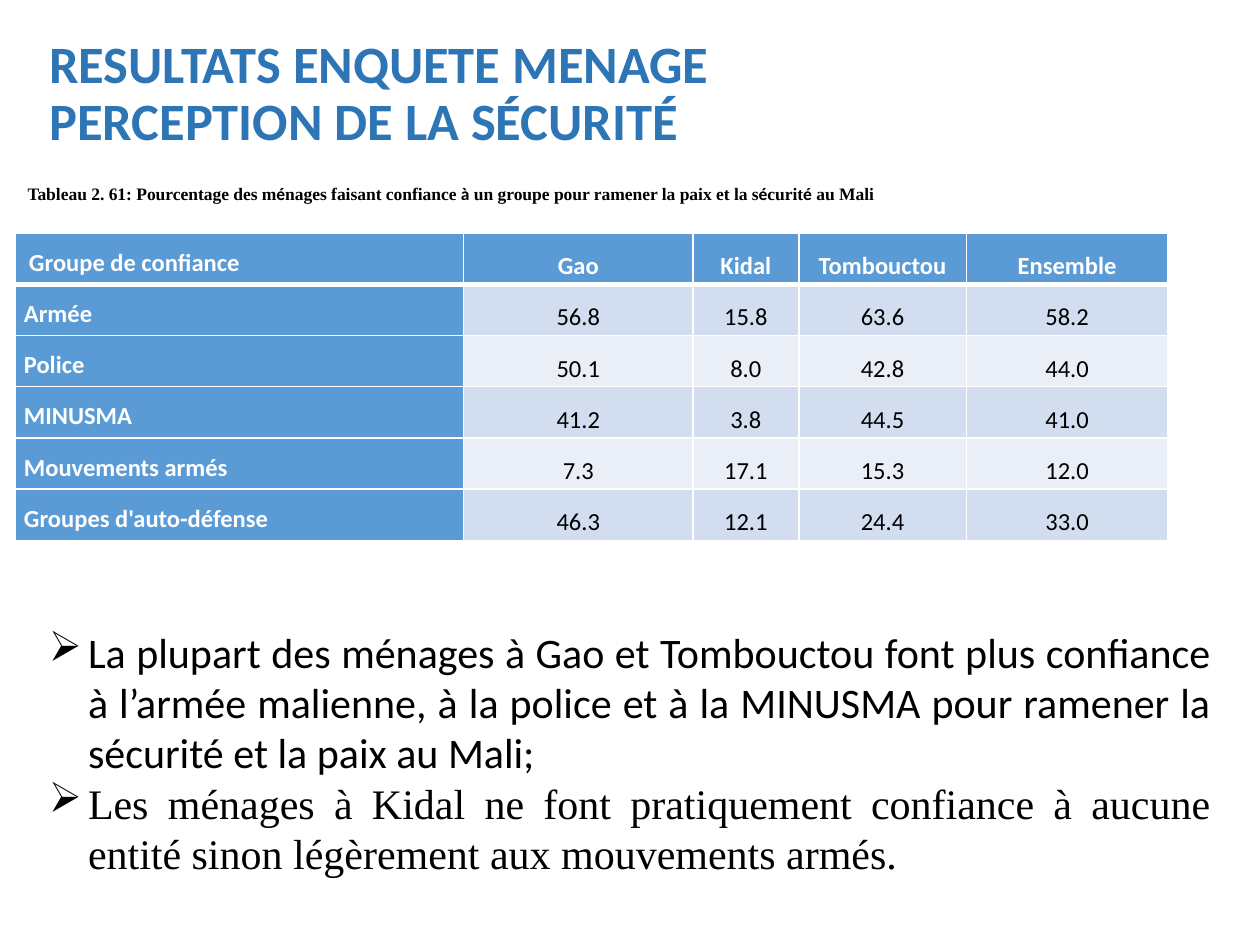
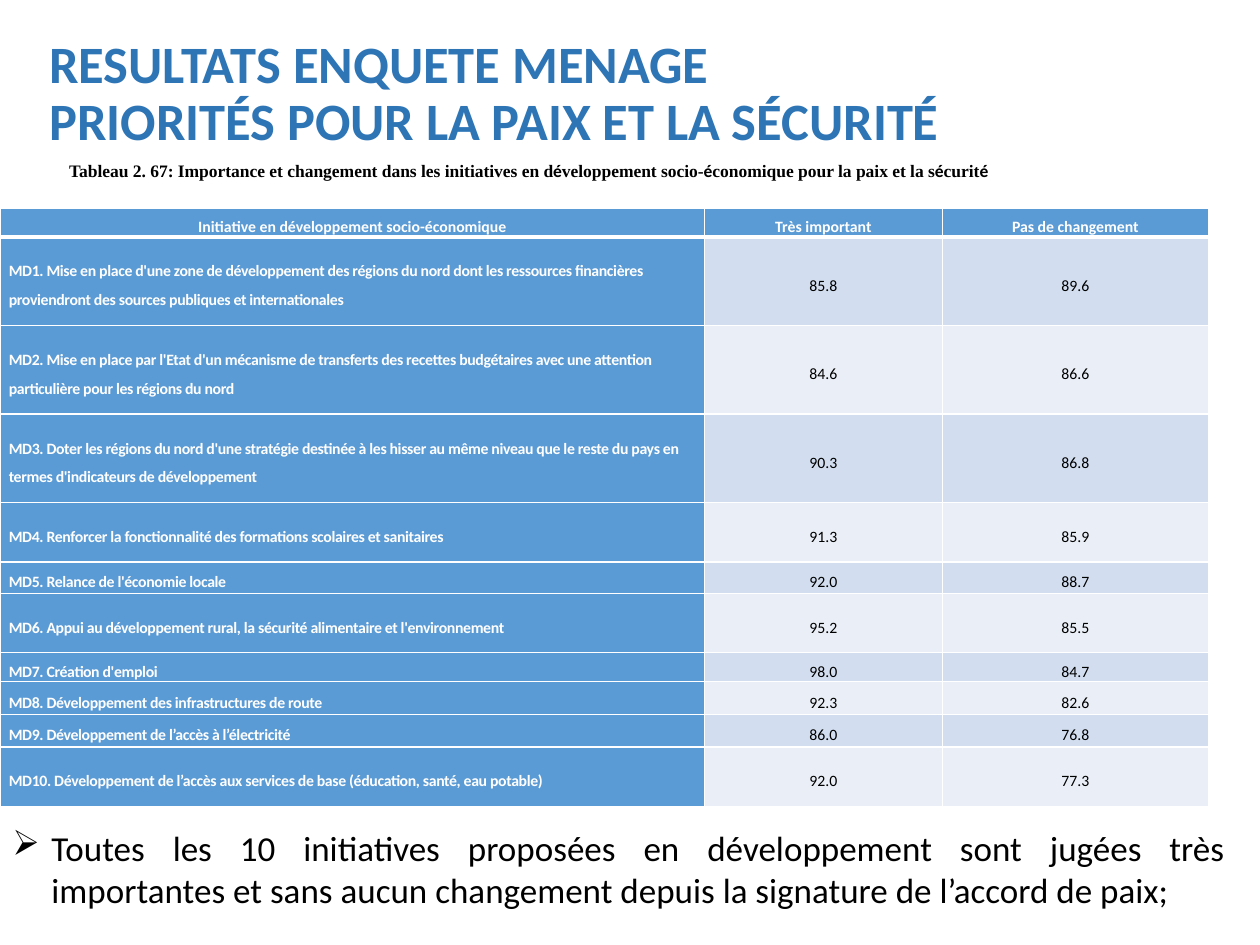
from copy import deepcopy
from itertools import groupby

from lxml import etree
from pptx import Presentation
from pptx.dml.color import RGBColor
from pptx.enum.text import MSO_ANCHOR, MSO_AUTO_SIZE, PP_ALIGN
from pptx.oxml.ns import qn
from pptx.util import Inches, Pt

BLUE = RGBColor(0x2E, 0x75, 0xB6)
HEAD = RGBColor(0x5B, 0x9B, 0xD5)
BANDS = [RGBColor(0xEA, 0xEF, 0xF7), RGBColor(0xD2, 0xDE, 0xEF)]
WHITE = RGBColor(0xFF, 0xFF, 0xFF)
BLACK = RGBColor(0, 0, 0)
LEFT, MID, JUST = PP_ALIGN.LEFT, PP_ALIGN.CENTER, PP_ALIGN.JUSTIFY
TOP, CORE = MSO_ANCHOR.TOP, MSO_ANCHOR.MIDDLE
GROW, FIXED = MSO_AUTO_SIZE.SHAPE_TO_FIT_TEXT, MSO_AUTO_SIZE.NONE
SANS, SERIF = "Calibri", "Times New Roman"

deck = Presentation()
deck.slide_width, deck.slide_height = Inches(10), Inches(7.5)
COL, ROW = deck.slide_width / 100, deck.slide_height / 100


def place(x, y, w, h):
    return int(x * COL), int(y * ROW), int(w * COL), int(h * ROW)


def write(para, text, size, color, bold=False, name=SANS):
    run = para.add_run()
    run.text = text
    look = {"size": Pt(size), "bold": bold, "name": name}
    for key, val in look.items():
        setattr(run.font, key, val)
    run.font.color.rgb = color
    return run


PAGES = [
    {
        "title": "PERCEPTION DE LA SÉCURITÉ",
        "note": "Tableau 2. 61: Pourcentage des ménages faisant confiance à un groupe "
                "pour ramener la paix et la sécurité au Mali",
        "note_at": (1.2, 18.67, 83.8, 3.6),
        "wrap": True,
        "grid_at": (1.2, 24.67),
        "cols": [35.6, 18.2, 8.4, 13.3, 16],
        "rows": [5.42] * 6,
        "size": 14,
        "side": TOP,
        "lead": 4,
        "inset": 1.1,
        "tight": 0,
        "cells": [
            ("Groupe de confiance", "Gao", "Kidal", "Tombouctou", "Ensemble"),
            ("Armée", "56.8", "15.8", "63.6", "58.2"),
            ("Police", "50.1", "8.0", "42.8", "44.0"),
            ("MINUSMA", "41.2", "3.8", "44.5", "41.0"),
            ("Mouvements armés", "7.3", "17.1", "15.3", "12.0"),
            ("Groupes d'auto-défense", "46.3", "12.1", "24.4", "33.0"),
        ],
        "body_at": (2.9, 65.6, 94.2, 28.27),
        "body_size": 24,
        "body": [
            ("La plupart des ménages à Gao et Tombouctou font plus confiance à l’armée "
             "malienne, à la police et à la MINUSMA pour ramener la sécurité et la paix "
             "au Mali;", SANS),
            ("Les ménages à Kidal ne font pratiquement confiance à aucune entité sinon "
             "légèrement aux mouvements armés.", SERIF),
        ],
    },
    {
        "title": "PRIORITÉS POUR LA PAIX ET LA SÉCURITÉ",
        "note": "Tableau 2. 67: Importance et changement dans les initiatives en "
                "développement socio-économique pour la paix et la sécurité",
        "note_at": (4.5, 16.27, 76.1, 3.6),
        "wrap": False,
        "grid_at": (0, 22),
        "cols": [55.9, 18.9, 21.1],
        "rows": [3.07, 9.38, 9.38, 9.38, 6.27, 3.33, 6.27, 3.07, 3.47, 3.47, 6.27],
        "size": 9,
        "side": CORE,
        "lead": 0,
        "inset": 0.7,
        "tight": -20,
        "cells": [
            ("Initiative en développement socio-économique", "Très important",
             "Pas de changement"),
            ("MD1. Mise en place d'une zone de développement des régions du nord dont "
             "les ressources financières proviendront des sources publiques et "
             "internationales", "85.8", "89.6"),
            ("MD2. Mise en place par l'Etat d'un mécanisme de transferts des recettes "
             "budgétaires avec une attention particulière pour les régions du nord",
             "84.6", "86.6"),
            ("MD3. Doter les régions du nord d'une stratégie destinée à les hisser au "
             "même niveau que le reste du pays en termes d'indicateurs de développement",
             "90.3", "86.8"),
            ("MD4. Renforcer la fonctionnalité des formations scolaires et sanitaires",
             "91.3", "85.9"),
            ("MD5. Relance de l'économie locale", "92.0", "88.7"),
            ("MD6. Appui au développement rural, la sécurité alimentaire et "
             "l'environnement", "95.2", "85.5"),
            ("MD7. Création d'emploi", "98.0", "84.7"),
            ("MD8. Développement des infrastructures de route", "92.3", "82.6"),
            ("MD9. Développement de l’accès à l’électricité", "86.0", "76.8"),
            ("MD10. Développement de l’accès aux services de base (éducation, santé, "
             "eau potable)", "92.0", "77.3"),
        ],
        "body_at": (0, 86.8, 98.2, 10.27),
        "body_size": 20,
        "body": [
            ("Toutes les 10 initiatives proposées en développement sont jugées très "
             "importantes et sans aucun changement depuis la signature de l’accord de "
             "paix;", SANS),
        ],
    },
]

for page in PAGES:
    slide = deck.slides.add_slide(deck.slide_layouts[5])
    title = slide.shapes.title
    title.left, title.top, title.width, title.height = place(2.9, 2.93, 94.2, 14.27)
    frame = title.text_frame
    frame.auto_size, frame.vertical_anchor = FIXED, CORE
    para = frame.paragraphs[0]
    para.alignment, para.line_spacing = LEFT, 0.9
    run = write(para, "RESULTATS ENQUETE MENAGE", 30, BLUE, True)
    para.add_line_break()
    para._p.find(qn("a:br")).append(deepcopy(run._r.rPr))
    write(para, page["title"], 30, BLUE, True)

    frame = slide.shapes.add_textbox(*place(*page["body_at"])).text_frame
    frame.word_wrap, frame.auto_size = True, GROW
    for i, (text, name) in enumerate(page["body"]):
        para = frame.add_paragraph() if i else frame.paragraphs[0]
        para.alignment = JUST
        props = para._p.get_or_add_pPr()
        props.set("marL", str(Inches(0.31)))
        props.set("indent", str(-Inches(0.31)))
        etree.SubElement(props, qn("a:buChar"), char="➢")
        write(para, text, page["body_size"], BLACK, name=name)

    cells, cols, rows = page["cells"], page["cols"], page["rows"]
    spot = place(*page["grid_at"], sum(cols), sum(rows))
    table = slide.shapes.add_table(len(rows), len(cols), *spot).table
    table.first_col = True
    for col, width in zip(table.columns, cols):
        col.width = int(width * COL)
    for r, line in enumerate(cells):
        table.rows[r].height = int(rows[r] * ROW)
        for c, text in enumerate(line):
            cell = table.cell(r, c)
            label = r == 0 or c == 0
            look = {
                "margin_left": int((page["inset"] if r == c == 0 else 0.7) * COL),
                "margin_right": int(0.7 * COL),
                "margin_top": 0,
                "margin_bottom": 0,
                "vertical_anchor": CORE if c else page["side"],
            }
            for key, val in look.items():
                setattr(cell, key, val)
            props = cell._tc.get_or_add_tcPr()
            for side in "LRTB":
                thick = (r, side) in [(0, "B"), (1, "T")]
                edge = etree.SubElement(props, qn(f"a:ln{side}"), w=str(Pt(3 if thick else 1)))
                fill = etree.SubElement(edge, qn("a:solidFill"))
                etree.SubElement(fill, qn("a:srgbClr"), val=str(WHITE))
            cell.fill.solid()
            cell.fill.fore_color.rgb = HEAD if label else BANDS[r % 2]
            para = cell.text_frame.paragraphs[0]
            centre = c > 0 or (r == 0 and page["side"] == CORE)
            para.alignment, para.line_spacing = MID if centre else LEFT, 1.5
            para.space_before = Pt(0 if r else page["lead"])
            run = write(para, text, page["size"], WHITE if label else BLACK, label)
            if r and c == 0:
                run._r.rPr.set("spc", str(page["tight"]))

    frame = slide.shapes.add_textbox(*place(*page["note_at"])).text_frame
    frame.word_wrap, frame.auto_size = page["wrap"], GROW
    frame.vertical_anchor = CORE
    for accent, part in groupby(page["note"], lambda sign: sign in "éà"):
        write(frame.paragraphs[0], "".join(part), 10, BLACK, True, SANS if accent else SERIF)

deck.save("out.pptx")
